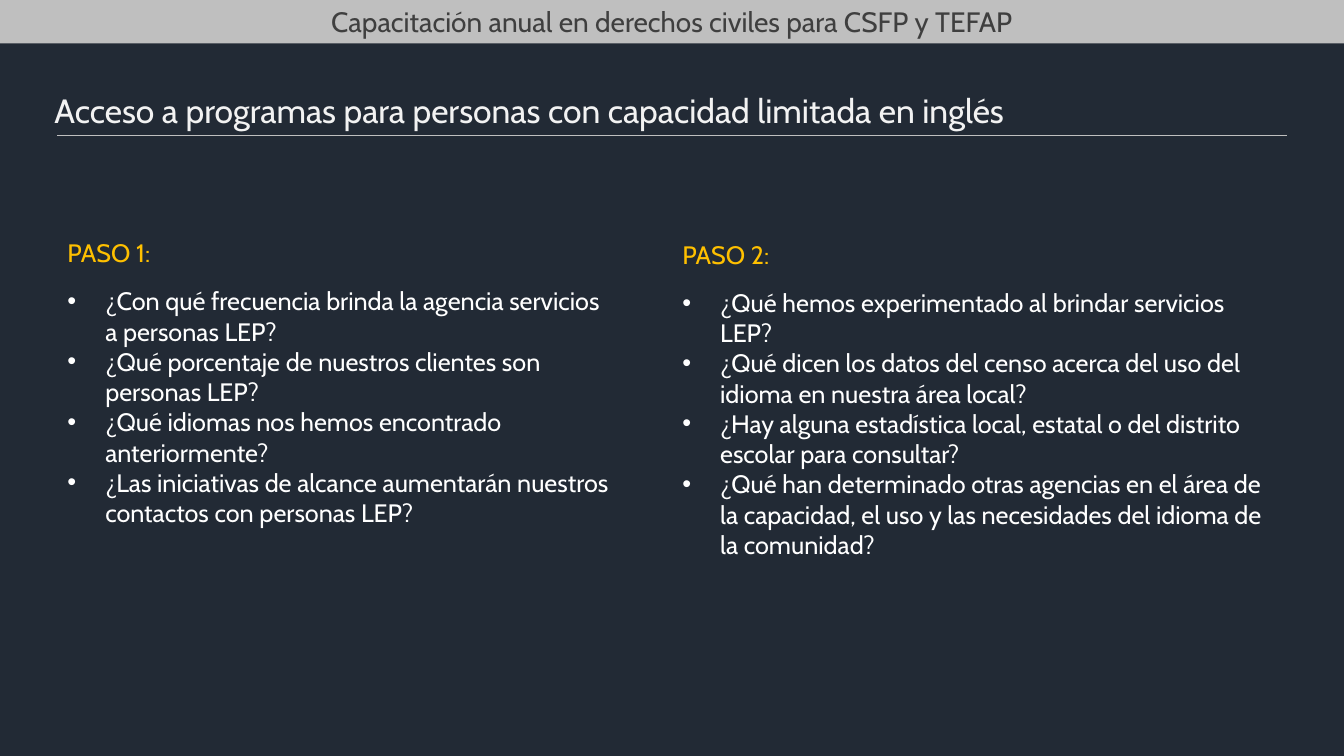
"""Build the slide on programme access for people with limited English."""
from pptx import Presentation
from pptx.dml.color import RGBColor
from pptx.enum.shapes import MSO_CONNECTOR as CONN, MSO_SHAPE as SHAPE
from pptx.enum.text import MSO_ANCHOR as ANCHOR, MSO_AUTO_SIZE as FIT, PP_ALIGN as ALIGN
from pptx.oxml.ns import qn
from pptx.util import Pt
from lxml.etree import SubElement

NAVY = RGBColor(0x22, 0x2A, 0x35)
SILVER = RGBColor(0xBF, 0xBF, 0xBF)
GRAPHITE = RGBColor(0x3F, 0x3F, 0x3F)
PALE = RGBColor(0xF2, 0xF2, 0xF2)
WHITE = RGBColor(0xFF, 0xFF, 0xFF)
AMBER = RGBColor(0xFF, 0xC0, 0x00)

STEPS = [
    ("PASO 1:", (41, 165.6, 402.5, 273), 13.2, [
        "¿Con qué frecuencia brinda la agencia servicios a personas LEP?",
        "¿Qué porcentaje de nuestros clientes son personas LEP?",
        "¿Qué idiomas nos hemos encontrado anteriormente?",
        "¿Las iniciativas de alcance aumentarán nuestros contactos con personas LEP?",
    ]),
    ("PASO 2:", (480.2, 167.3, 439.2, 260.4), 12.6, [
        "¿Qué hemos experimentado al brindar servicios LEP?",
        "¿Qué dicen los datos del censo acerca del uso del idioma en nuestra área local?",
        "¿Hay alguna estadística local, estatal o del distrito escolar para consultar?",
        "¿Qué han determinado otras agencias en el área de la capacidad, el uso "
        "y las necesidades del idioma de la comunidad?",
    ]),
]


def write(p, text, font="Cabin", size=18, color=WHITE, align=ALIGN.LEFT, after=0, bullet=False):
    p.alignment = align
    p.line_spacing = 1.0
    p.space_before, p.space_after = Pt(0), Pt(after)
    r = p.add_run()
    r.text = text
    r.font.name, r.font.size = font, Pt(size)
    r.font.color.rgb = color
    pPr = p._p.get_or_add_pPr()
    indent = Pt(27) if bullet else 0
    pPr.set("marL", str(indent))
    pPr.set("indent", str(-indent))
    if bullet:
        SubElement(SubElement(pPr, qn("a:buClr")), qn("a:srgbClr"), val=str(color))
        SubElement(pPr, qn("a:buFont"), typeface="Arial")
        SubElement(pPr, qn("a:buChar"), char="•")
    else:
        SubElement(pPr, qn("a:buNone"))


class Deck:
    def __init__(self, font):
        self.font = font
        self.prs = Presentation()
        self.prs.slide_width, self.prs.slide_height = Pt(960), Pt(540)

    def new_slide(self, layout, color):
        self.s = self.prs.slides.add_slide(self.prs.slide_layouts[layout])
        fill = self.s.background.fill
        fill.solid()
        fill.fore_color.rgb = color

    def place(self, idx, box):
        sp = self.s.placeholders[idx]
        sp.left, sp.top, sp.width, sp.height = map(Pt, box)
        tf = sp.text_frame
        tf.word_wrap, tf.auto_size = True, FIT.NONE
        tf.vertical_anchor = ANCHOR.TOP
        return tf

    def title(self, text, box):
        tf = self.place(0, box)
        write(tf.paragraphs[0], text, self.font, 24, PALE, ALIGN.JUSTIFY)

    def step(self, idx, heading, box, gap, questions):
        tf = self.place(idx, box)
        write(tf.paragraphs[0], heading, self.font, color=AMBER, after=gap)
        for question in questions:
            write(tf.add_paragraph(), question, self.font, bullet=True)

    def banner(self, text, box):
        sp = self.s.shapes.add_shape(SHAPE.RECTANGLE, *map(Pt, box))
        sp.shadow.inherit = False
        sp.fill.solid()
        sp.fill.fore_color.rgb = SILVER
        sp.line.fill.background()
        tf = sp.text_frame
        tf.word_wrap, tf.vertical_anchor = True, ANCHOR.MIDDLE
        write(tf.paragraphs[0], text, self.font, 20, GRAPHITE, ALIGN.CENTER)

    def rule(self, x1, x2, y):
        line = self.s.shapes.add_connector(CONN.STRAIGHT, Pt(x1), Pt(y), Pt(x2), Pt(y))
        line.line.color.rgb, line.line.width = SILVER, Pt(0.75)
        SubElement(line._element.spPr, qn("a:effectLst"))


def main():
    deck = Deck("Cabin")
    deck.new_slide(3, NAVY)
    deck.banner("Capacitación anual en derechos civiles para CSFP y TEFAP", (-0.5, 0, 961, 31))
    deck.title("Acceso a programas para personas con capacidad limitada en inglés",
               (31.7, 60.5, 879, 36))
    deck.rule(41, 919.5, 96.5)
    for idx, step in enumerate(STEPS, 1):
        deck.step(idx, *step)
    deck.prs.save("out.pptx")


if __name__ == "__main__":
    main()
